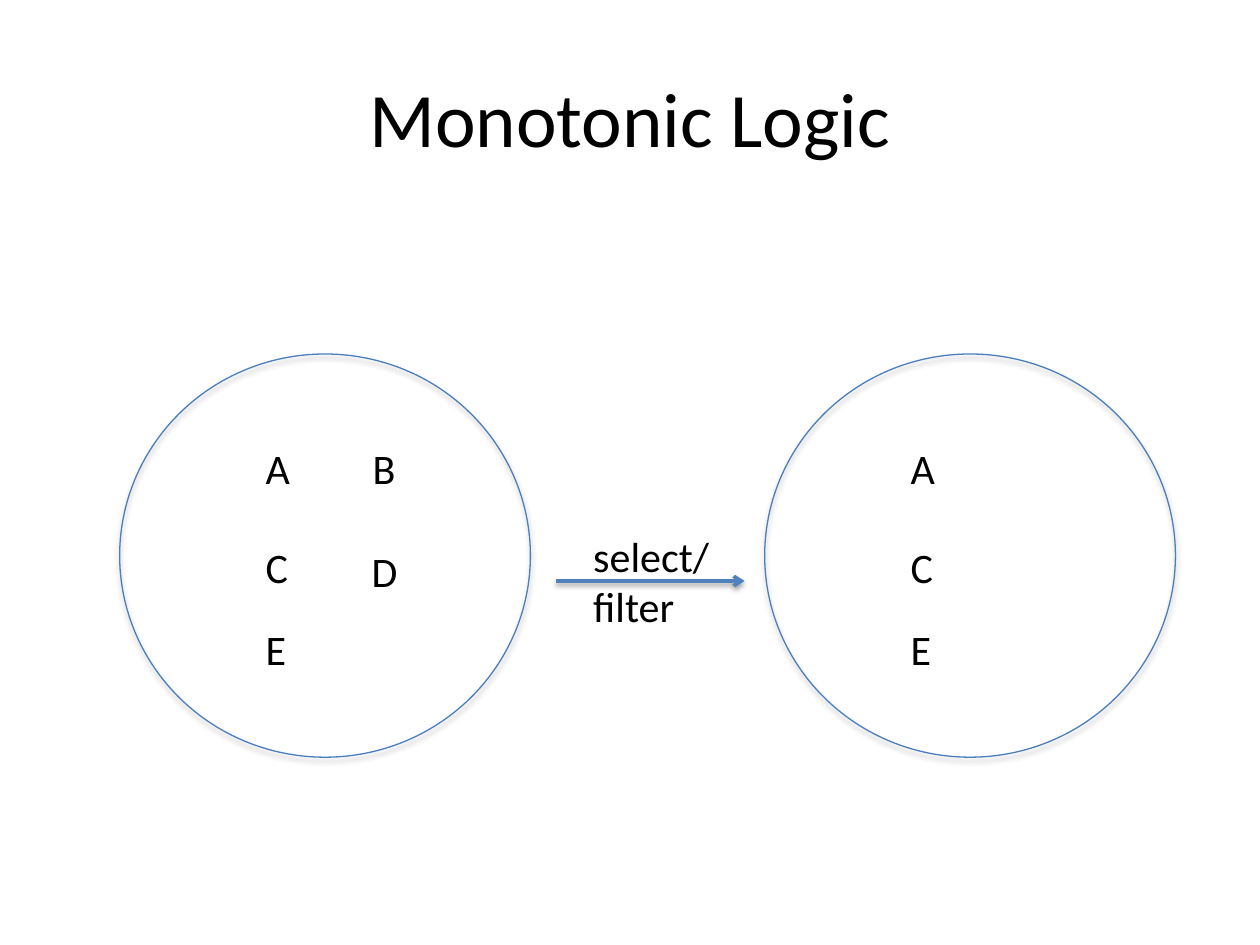
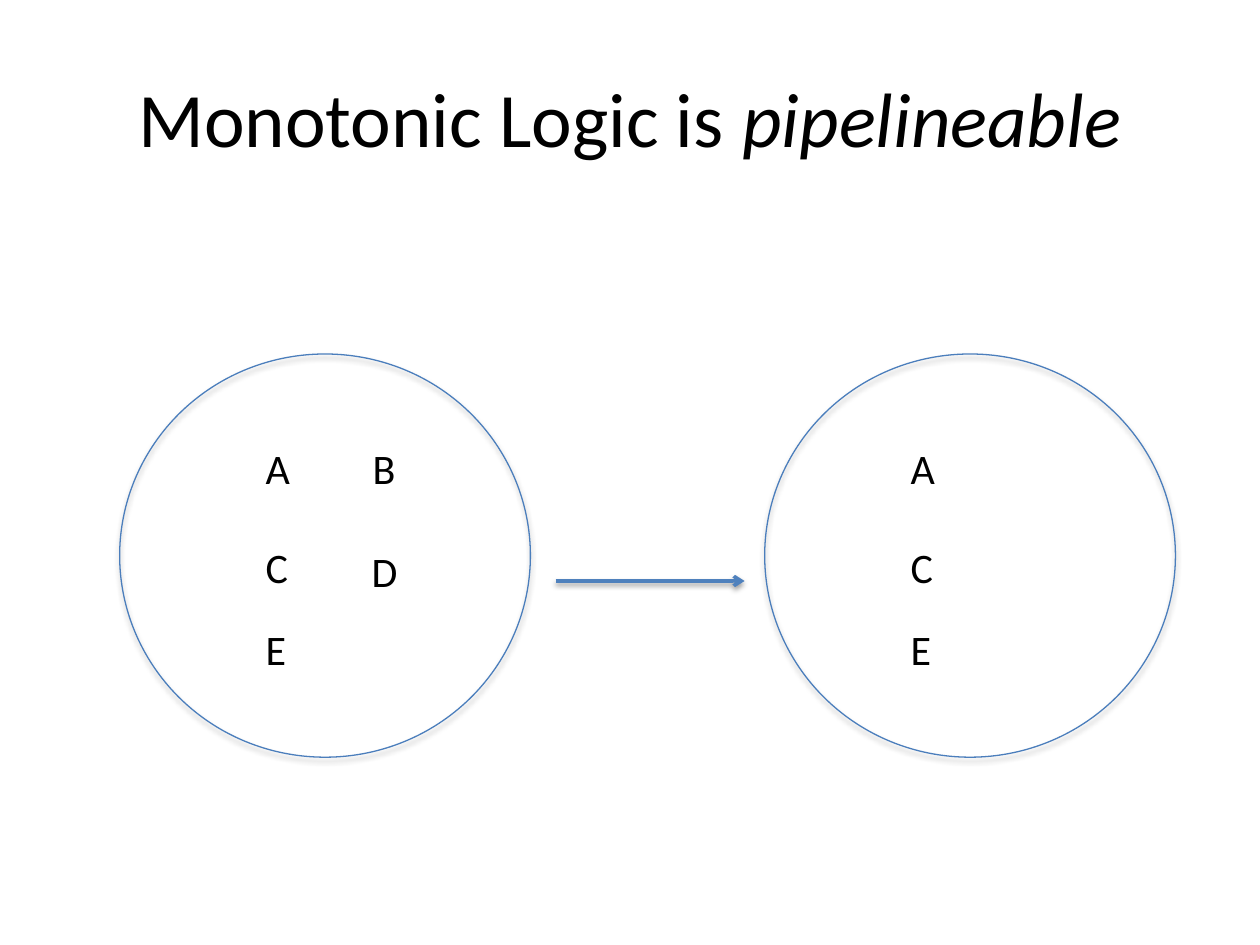
"""Build two slides that show monotonic logic as a filter between two sets."""
import dataclasses
import typing

import lxml.etree
import pptx
import pptx.dml.color
import pptx.enum.shapes
import pptx.enum.text
import pptx.oxml.ns
import pptx.util

Pt = pptx.util.Pt
qn = pptx.oxml.ns.qn

BLACK = pptx.dml.color.RGBColor(0x00, 0x00, 0x00)
EDGE = pptx.dml.color.RGBColor(0x4B, 0x7E, 0xBC)
BLUE = pptx.dml.color.RGBColor(0x4F, 0x81, 0xBD)
FONT = "Calibri"


@dataclasses.dataclass(frozen=True)
class Label:
    text: str
    left: float
    top: float
    width: float
    height: float = 36


@dataclasses.dataclass(frozen=True)
class Circle:
    left: float
    items: tuple[Label, ...]
    top: float = 202.3
    width: float = 234.7
    height: float = 230.4


@dataclasses.dataclass(frozen=True)
class Page:
    title: str
    stress: str = ""
    notes: tuple[Label, ...] = ()


KEPT = (
    Label("A", 76.3, 46.8, 28.8),
    Label("C", 76.3, 103.7, 27.4),
    Label("E", 76.3, 150.5, 26.6),
)
DROPPED = (Label("B", 137.5, 46.8, 28), Label("D", 136.8, 105.8, 29.5))
CIRCLES = (Circle(68.4, KEPT + DROPPED), Circle(437, KEPT))
PAGES = (
    Page("Monotonic Logic", notes=(Label("select/\nfilter", 331.9, 299.5, 82, 65.5),)),
    Page("Monotonic Logic is ", stress="pipelineable"),
)


def style(par: typing.Any, size: float) -> None:
    for run in par.runs:
        run.font.name = FONT
        run.font.size = Pt(size)
        run.font.color.rgb = BLACK


def shade(shape: typing.Any, alpha: int, dist: float) -> None:
    props = shape.element.spPr
    for old in props.findall(qn("a:effectLst")):
        props.remove(old)
    effects = lxml.etree.SubElement(props, qn("a:effectLst"))
    shadow = lxml.etree.SubElement(
        effects, qn("a:outerShdw"), blurRad=str(Pt(3.1)), dist=str(Pt(dist)),
        dir="5400000", rotWithShape="0")
    color = lxml.etree.SubElement(shadow, qn("a:srgbClr"), val=str(BLACK))
    lxml.etree.SubElement(color, qn("a:alpha"), val=str(alpha * 1000))


def draw_title(slide: typing.Any, page: Page) -> None:
    title = slide.shapes.title
    title.left, title.top, title.width, title.height = Pt(36), Pt(21.6), Pt(648), Pt(90)
    frame = title.text_frame
    frame.text = page.title
    frame.vertical_anchor = pptx.enum.text.MSO_ANCHOR.MIDDLE
    par = frame.paragraphs[0]
    par.alignment = pptx.enum.text.PP_ALIGN.CENTER
    if page.stress:
        run = par.add_run()
        run.text = page.stress
        run.font.italic = True
    style(par, 44)


def draw_label(slide: typing.Any, label: Label, left: float = 0, top: float = 0) -> None:
    box = slide.shapes.add_textbox(
        Pt(left + label.left), Pt(top + label.top), Pt(label.width), Pt(label.height))
    frame = box.text_frame
    frame.word_wrap = False
    frame.auto_size = pptx.enum.text.MSO_AUTO_SIZE.SHAPE_TO_FIT_TEXT
    frame.text = label.text
    for par in frame.paragraphs:
        style(par, 24)


def draw_circle(slide: typing.Any, circle: Circle) -> None:
    shape = slide.shapes.add_shape(
        pptx.enum.shapes.MSO_SHAPE.OVAL,
        Pt(circle.left), Pt(circle.top), Pt(circle.width), Pt(circle.height))
    shape.fill.background()
    shape.line.color.rgb = EDGE
    shape.line.width = Pt(0.75)
    shade(shape, 35, 1.8)
    for item in circle.items:
        draw_label(slide, item, circle.left, circle.top)


def draw_arrow(slide: typing.Any) -> None:
    arrow = slide.shapes.add_connector(
        pptx.enum.shapes.MSO_CONNECTOR.STRAIGHT, Pt(317.5), Pt(332), Pt(425.5), Pt(332))
    arrow.line.color.rgb = BLUE
    arrow.line.width = Pt(2)
    line = arrow.element.spPr.find(qn("a:ln"))
    lxml.etree.SubElement(line, qn("a:tailEnd"), type="arrow")
    shade(arrow, 38, 1.6)


def main() -> None:
    deck = pptx.Presentation()
    deck.slide_width, deck.slide_height = Pt(720), Pt(540)
    for page in PAGES:
        slide = deck.slides.add_slide(deck.slide_layouts[5])
        draw_title(slide, page)
        for circle in CIRCLES:
            draw_circle(slide, circle)
        draw_arrow(slide)
        for note in page.notes:
            draw_label(slide, note)
    deck.save("out.pptx")


if __name__ == "__main__":
    main()
